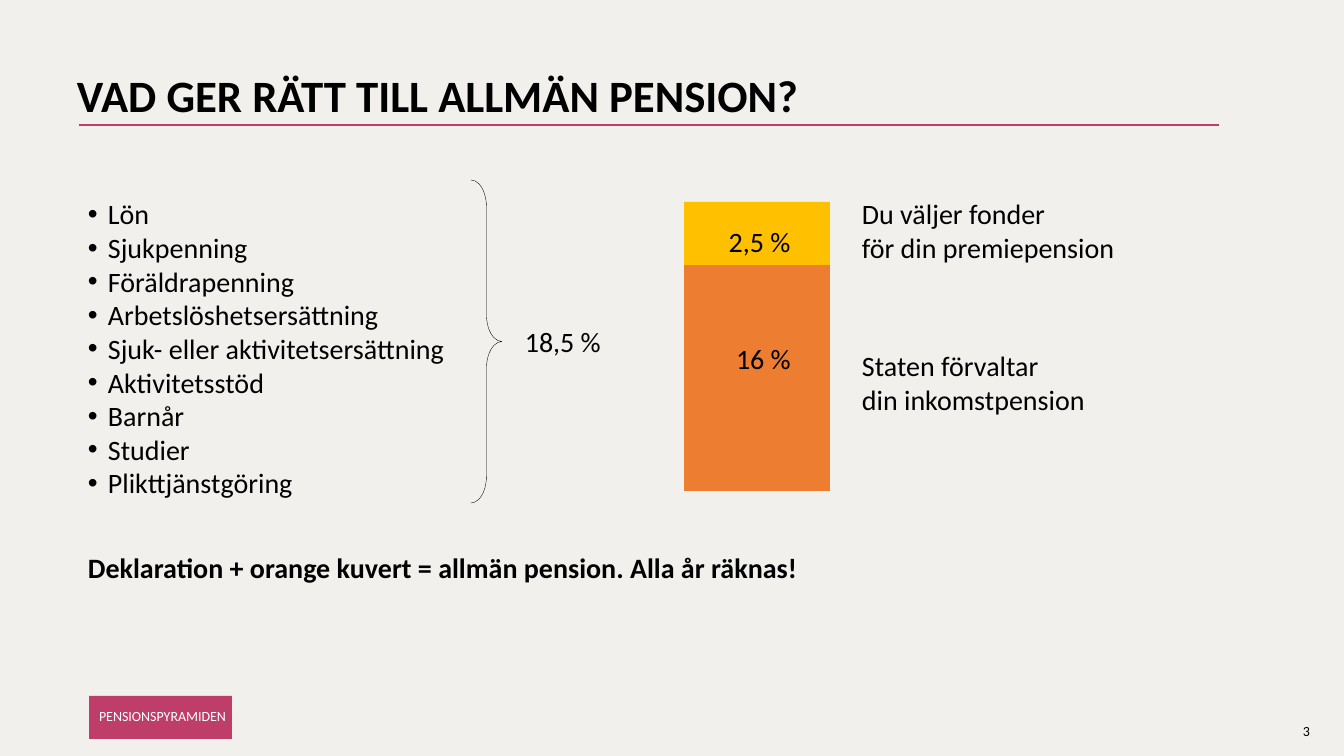
from lxml.etree import SubElement as Sub
from pptx import Presentation
from pptx.dml.color import RGBColor
from pptx.enum.shapes import MSO_CONNECTOR as Link, MSO_SHAPE as Kind
from pptx.enum.text import MSO_ANCHOR as Anchor, PP_ALIGN as Align
from pptx.oxml.ns import qn
from pptx.util import Pt

PX = 12192000 / 1344
FONT = "Calibri"
COLORS = {"back": "F1F0EC", "text": "000000", "white": "FFFFFF",
          "pink": "BE3E69", "gold": "FFC000", "orange": "ED7D31"}

TITLE = "VAD GER RÄTT TILL ALLMÄN PENSION?"
INCOME = ["Lön", "Sjukpenning", "Föräldrapenning", "Arbetslöshetsersättning",
          "Sjuk- eller aktivitetsersättning", "Aktivitetsstöd", "Barnår",
          "Studier", "Plikttjänstgöring"]
CLAIM = "Deklaration + orange kuvert = allmän pension. Alla år räknas!"
TAG = "PENSIONSPYRAMIDEN"
PAGE = "3"
TOTAL = "18,5 %"
BAR_X, BAR_W = 684, 146
BARS = [("gold", 202, 63), ("orange", 265, 226)]
SHARES = [("2,5 %", (700, 220, 119, 44)), ("16 %", (700, 337, 127, 44))]
NOTES = [(["Du väljer fonder", "för din premiepension"], 192),
         (["Staten förvaltar", "din inkomstpension"], 344)]


def emu(*nums):
    return [round(n * PX) for n in nums]


def tint(name):
    return RGBColor.from_string(COLORS[name])


def write(frame, lines, size=20, color="text", bold=False, align=Align.LEFT,
          bullet=False, spacing=None):
    for i, line in enumerate(lines):
        para = frame.paragraphs[0] if i == 0 else frame.add_paragraph()
        para.alignment = align
        if spacing:
            para.line_spacing = spacing
        if bullet:
            props = para._p.get_or_add_pPr()
            indent = emu(20)[0]
            props.set("marL", str(indent))
            props.set("indent", str(-indent))
            Sub(props, qn("a:buFont")).set("typeface", "Arial")
            Sub(props, qn("a:buChar")).set("char", "•")
        run = para.add_run()
        run.text = line
        font = run.font
        font.name, font.size, font.bold = FONT, Pt(size), bold
        font.color.rgb = tint(color)


def label(box, lines, **style):
    frame = slide.shapes.add_textbox(*emu(*box)).text_frame
    frame.word_wrap = True
    write(frame, lines, **style)


def block(kind, box, fill=None):
    shape = slide.shapes.add_shape(kind, *emu(*box))
    shape.shadow.inherit = False
    if fill:
        shape.fill.solid()
        shape.fill.fore_color.rgb = tint(fill)
        shape.line.fill.background()
    else:
        shape.fill.background()
    return shape


deck = Presentation()
deck.slide_width, deck.slide_height = emu(1344, 756)
slide = deck.slides.add_slide(deck.slide_layouts[6])
slide.background.fill.solid()
slide.background.fill.fore_color.rgb = tint("back")

rule = slide.shapes.add_connector(Link.STRAIGHT, *emu(79, 125, 1219, 125))
rule.line.color.rgb = tint("pink")
rule.line.width = Pt(1.5)
Sub(rule._element.spPr, qn("a:effectLst"))

label((67, 69, 1159, 60), [TITLE], size=32, bold=True, spacing=0.9)
label((78, 192, 385, 313), INCOME, bullet=True)
label((78, 546, 795, 44), [CLAIM], bold=True)

for fill, top, height in BARS:
    block(Kind.RECTANGLE, (BAR_X, top, BAR_W, height), fill)
for share, box in SHARES:
    label(box, [share], align=Align.CENTER)
for lines, top in NOTES:
    label((852, top, 338, 78), lines)

brace = block(Kind.RIGHT_BRACE, (471, 180, 31, 323))
brace.adjustments[0] = 0.87
brace.line.color.rgb = tint("text")
brace.line.width = Pt(0.25)
label((515, 320, 107, 44), [TOTAL])

tag = block(Kind.RECTANGLE, (89, 696, 143, 43), "pink").text_frame
tag.word_wrap = False
tag.vertical_anchor = Anchor.MIDDLE
tag.margin_left, tag.margin_right = emu(10, 4)
write(tag, [TAG], size=10, color="white", spacing=0.9)
label((1293, 718, 40, 27), [PAGE], size=10)

deck.save("out.pptx")
